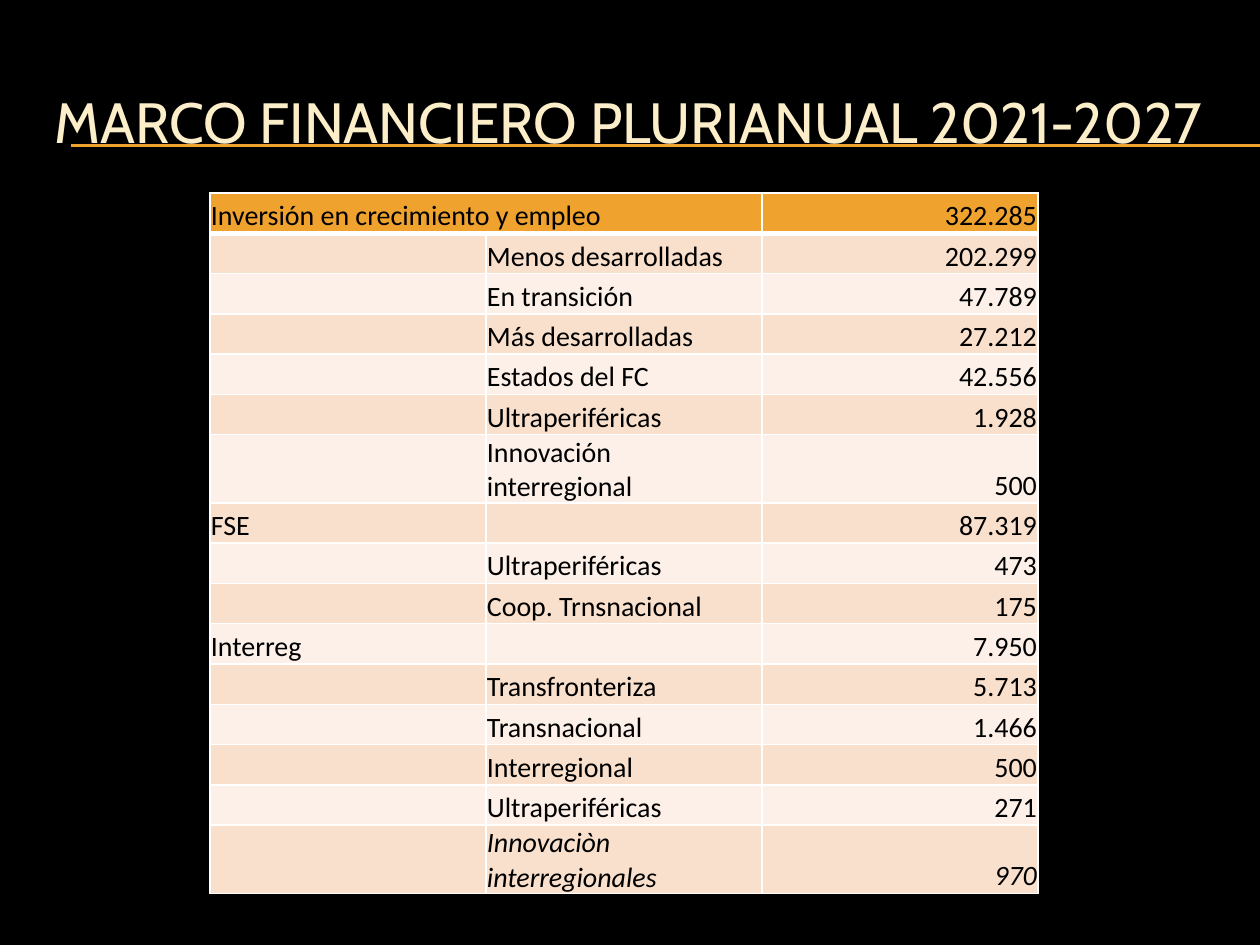
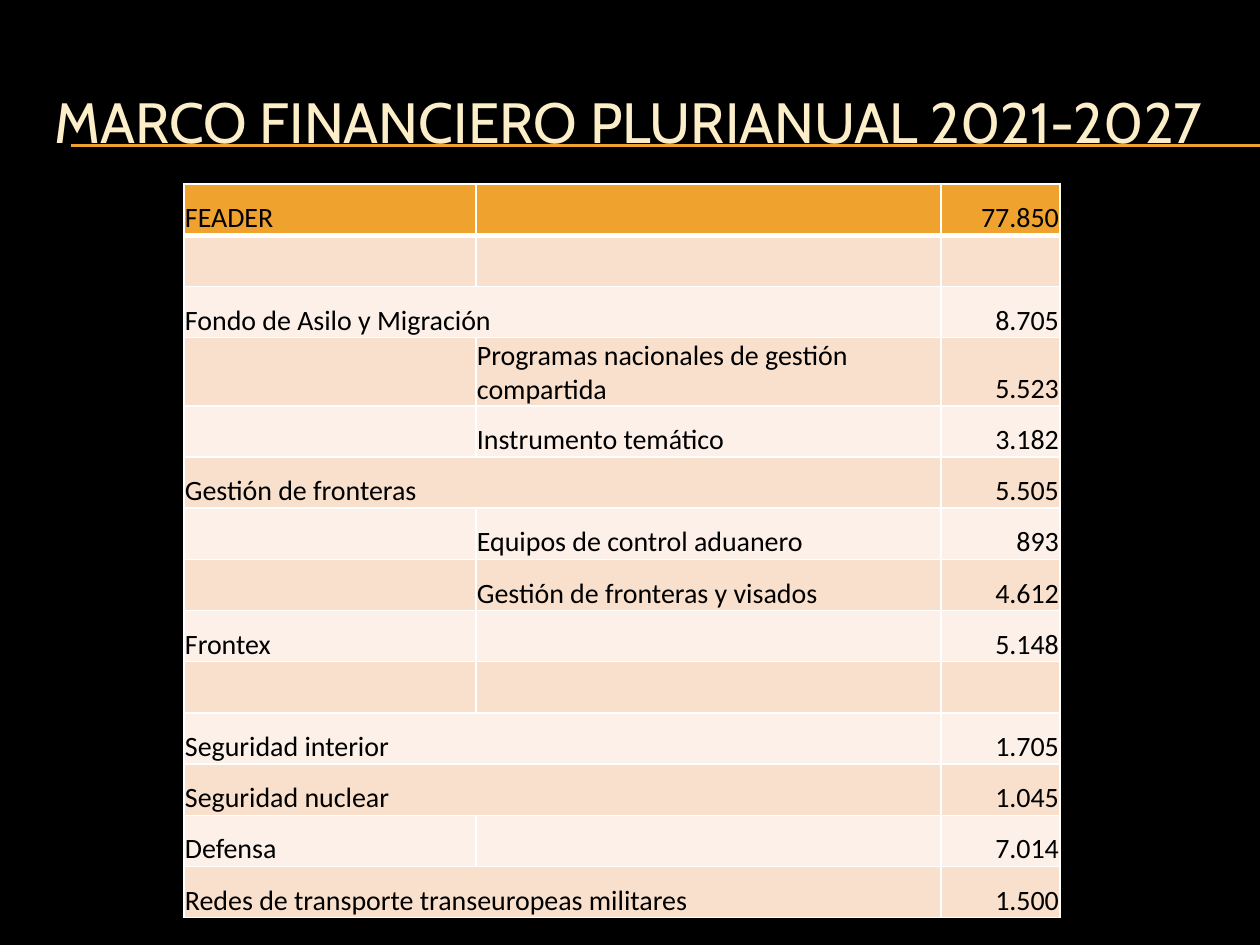
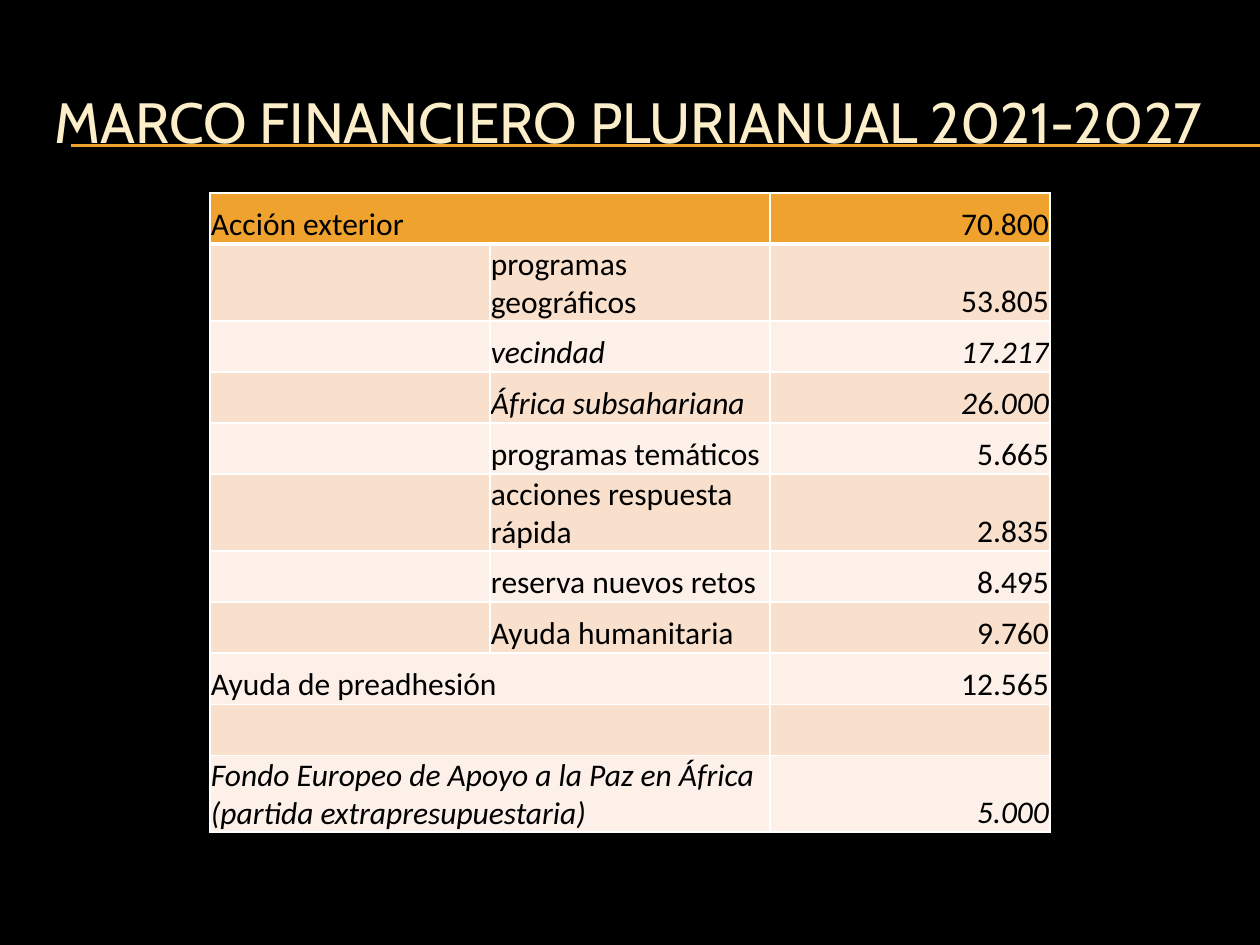
from collections import namedtuple

from lxml import etree
from pptx import Presentation
from pptx.dml.color import RGBColor
from pptx.enum.shapes import MSO_CONNECTOR
from pptx.enum.text import MSO_ANCHOR as ANCHOR, PP_ALIGN as ALIGN
from pptx.oxml import parse_xml
from pptx.oxml.ns import nsdecls, qn
from pptx.util import Pt

PX = 914400 / 126
WIDTH, HEIGHT = 1260, 945

BLACK = RGBColor(0x00, 0x00, 0x00)
WHITE = RGBColor(0xFF, 0xFF, 0xFF)
CREAM = RGBColor(0xFB, 0xEE, 0xC9)
ORANGE = RGBColor(0xF0, 0xA2, 0x2E)
PEACH = RGBColor(0xF9, 0xE0, 0xCD)
PALE = RGBColor(0xFC, 0xF0, 0xE8)

TITLE_FONT, TABLE_FONT = "Cabin", "Calibri"
TITLE = "MARCO FINANCIERO PLURIANUAL 2021-2027"

# An item of None lets the group run over both label columns.
Row = namedtuple("Row", "group item value italic", defaults=[False])

COHESION = [
    Row("Inversión en crecimiento y empleo", None, "322.285"),
    Row("", "Menos desarrolladas", "202.299"),
    Row("", "En transición", "47.789"),
    Row("", "Más desarrolladas", "27.212"),
    Row("", "Estados del FC", "42.556"),
    Row("", "Ultraperiféricas", "1.928"),
    Row("", "Innovación interregional", "500"),
    Row("FSE", "", "87.319"),
    Row("", "Ultraperiféricas", "473"),
    Row("", "Coop. Trnsnacional", "175"),
    Row("Interreg", "", "7.950"),
    Row("", "Transfronteriza", "5.713"),
    Row("", "Transnacional", "1.466"),
    Row("", "Interregional", "500"),
    Row("", "Ultraperiféricas", "271"),
    Row("", "Innovaciòn interregionales", "970", True),
]

SECURITY = [
    Row("FEADER", "", "77.850"),
    Row("", "", ""),
    Row("Fondo de Asilo y Migración", None, "8.705"),
    Row("", "Programas nacionales de gestión compartida", "5.523"),
    Row("", "Instrumento temático", "3.182"),
    Row("Gestión de fronteras", None, "5.505"),
    Row("", "Equipos de control aduanero", "893"),
    Row("", "Gestión de fronteras y visados", "4.612"),
    Row("Frontex", "", "5.148"),
    Row("", "", ""),
    Row("Seguridad interior", None, "1.705"),
    Row("Seguridad nuclear", None, "1.045"),
    Row("Defensa", "", "7.014"),
    Row("Redes de transporte transeuropeas militares", None, "1.500"),
]

EXTERNAL = [
    Row("Acción exterior", None, "70.800"),
    Row("", "programas geográficos", "53.805"),
    Row("", "vecindad", "17.217", True),
    Row("", "África subsahariana", "26.000", True),
    Row("", "programas temáticos", "5.665"),
    Row("", "acciones respuesta rápida", "2.835"),
    Row("", "reserva nuevos retos", "8.495"),
    Row("", "Ayuda humanitaria", "9.760"),
    Row("Ayuda de preadhesión", None, "12.565"),
    Row("", None, ""),
    Row("Fondo Europeo de Apoyo a la Paz en África (partida extrapresupuestaria)",
        None, "5.000", True),
]


def px(n):
    return round(n * PX)


class Deck:
    def __init__(self):
        self.prs = Presentation()
        self.prs.slide_width, self.prs.slide_height = px(WIDTH), px(HEIGHT)

    def slide(self):
        """Start a slide with the black ground, double rule and title."""
        self.s = self.prs.slides.add_slide(self.prs.slide_layouts[6])
        fill = self.s.background.fill
        fill.solid()
        fill.fore_color.rgb = BLACK
        for y in (145, 146):
            self.rule(71, y, WIDTH)
        self.title(TITLE)

    def rule(self, left, y, right):
        line = self.s.shapes.add_connector(
            MSO_CONNECTOR.STRAIGHT, px(left), px(y), px(right), px(y))
        line.line.color.rgb = ORANGE
        line.line.width = Pt(0.75)
        etree.SubElement(line._element.spPr, qn("a:effectLst"))

    def title(self, text):
        tf = self.s.shapes.add_textbox(px(42), px(63), px(1197), px(116)).text_frame
        tf.word_wrap = True
        tf.vertical_anchor = ANCHOR.MIDDLE
        tf.text = text
        self.style(tf.paragraphs[0], TITLE_FONT, 32.4, CREAM)

    def style(self, p, name, size, color, italic=False):
        for r in p.runs:
            r.font.name, r.font.size = name, Pt(size)
            r.font.bold, r.font.italic = False, italic
            r.font.color.rgb = color

    def table(self, left, top, height, widths, rows, size):
        """Draw rows of equal height; those with wrapped text grow."""
        table = self.s.shapes.add_table(
            len(rows), len(widths), px(left), px(top), px(sum(widths)), px(height)).table
        for column, width in zip(table.columns, widths):
            column.width = px(width)
        for i, row in enumerate(rows):
            fill = ORANGE if i == 0 else PEACH if i % 2 else PALE
            for j, text in enumerate(row[:3]):
                cell = table.cell(i, j)
                self.borders(cell, top=3 if i == 1 else 1, bottom=3 if i == 0 else 1)
                self.cell(cell, text or "", fill, size, row.italic)
            table.cell(i, 2).text_frame.paragraphs[0].alignment = ALIGN.RIGHT
            if row.item is None:
                table.cell(i, 0).merge(table.cell(i, 1))

    def cell(self, cell, text, fill, size, italic):
        cell.fill.solid()
        cell.fill.fore_color.rgb = fill
        cell.margin_left = cell.margin_right = cell.margin_top = px(1)
        cell.margin_bottom = 0
        cell.vertical_anchor = ANCHOR.BOTTOM
        cell.text_frame.text = text
        self.style(cell.text_frame.paragraphs[0], TABLE_FONT, size, BLACK, italic)

    def borders(self, cell, top, bottom):
        tc_pr = cell._tc.get_or_add_tcPr()
        for side, width in zip("LRTB", (1, 1, top, bottom)):
            tc_pr.append(parse_xml(
                f'<a:ln{side} {nsdecls("a")} w="{Pt(width)}"><a:solidFill>'
                f'<a:srgbClr val="{WHITE}"/></a:solidFill></a:ln{side}>'))


def main():
    deck = Deck()
    deck.slide()
    deck.table(210, 193, 645, [276] * 3, COHESION, 16)
    deck.slide()
    deck.table(184, 184, 717, [292, 465, 119], SECURITY, 16)
    deck.slide()
    deck.table(210, 193, 563, [280] * 3, EXTERNAL, 18)
    deck.prs.save("out.pptx")


if __name__ == "__main__":
    main()
